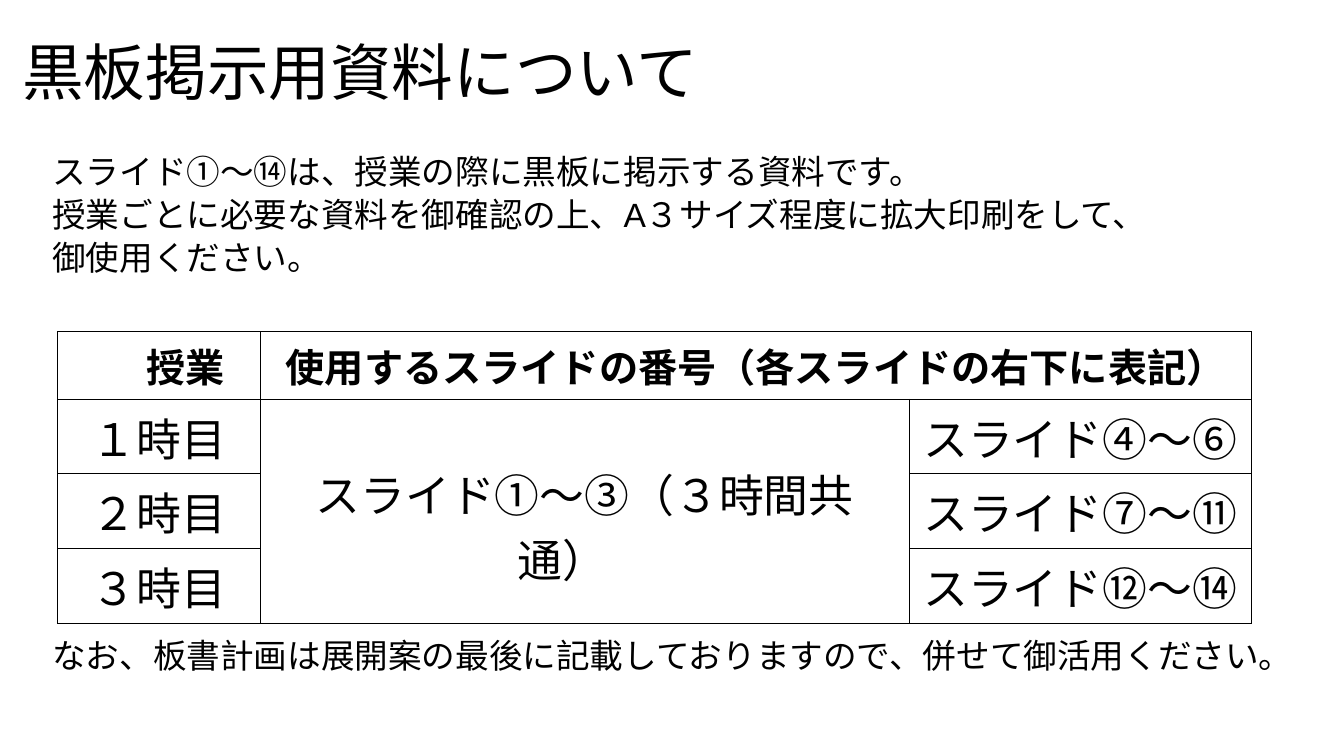
from lxml.etree import SubElement
from pptx import Presentation
from pptx.dml.color import RGBColor
from pptx.enum.text import MSO_ANCHOR, MSO_AUTO_SIZE, PP_ALIGN
from pptx.oxml.ns import qn
from pptx.util import Inches, Pt

BLACK = RGBColor(0x00, 0x00, 0x00)
WHITE = RGBColor(0xFF, 0xFF, 0xFF)
FONT = "Calibri"

TITLE = "黒板掲示用資料について"
INTRO = [  # paragraphs of (text, font) runs
    [("スライド①～⑭は、授業の際に黒板に掲示する資料です。", FONT)],
    [("授業ごとに必要な資料を御確認の上、", FONT), ("A", "Arial"),
     ("３サイズ程度に拡大印刷をして、", FONT)],
    [("御使用ください。", FONT)],
]
CLOSING = [[("なお、板書計画は展開案の最後に記載しておりますので、併せて御活用ください。", FONT)]]

HEADER = ["授業", "使用するスライドの番号（各スライドの右下に表記）", ""]
LESSONS = [
    ["１時目", "スライド①～③（３時間共通）　", "スライド④～⑥"],
    ["２時目", "", "スライド⑦～⑪"],
    ["３時目", "", "スライド⑫～⑭"],
]
COL_WIDTHS = [2.01, 6.44, 3.39]
HEADER_HEIGHT, LESSON_HEIGHT = 0.67, 0.74


def add_run(p, text, size, font=FONT, bold=False):
    r = p.add_run()
    r.text = text
    r.font.name = font
    r.font.size = Pt(size)
    r.font.bold = bold
    r.font.color.rgb = BLACK


def add_text(s, top, height, paragraphs):
    tf = s.shapes.add_textbox(Inches(0.42), Inches(top), Inches(12.9), Inches(height)).text_frame
    tf.word_wrap = True
    for i, runs in enumerate(paragraphs):
        p = tf.paragraphs[0] if i == 0 else tf.add_paragraph()
        p.line_spacing = 0.9
        if i:
            p.space_before = Pt(5)
        for text, font in runs:
            add_run(p, text, 24, font)


def add_borders(cell):
    tc_pr = cell._tc.get_or_add_tcPr()
    for i, side in enumerate(("lnL", "lnR", "lnT", "lnB")):
        ln = tc_pr.makeelement(qn(f"a:{side}"), {"w": str(Pt(0.5))})
        fill = SubElement(ln, qn("a:solidFill"))
        SubElement(fill, qn("a:srgbClr"), val=str(BLACK))
        tc_pr.insert(i, ln)


def add_lesson_table(s):
    rows = [HEADER] + LESSONS
    heights = [HEADER_HEIGHT] + [LESSON_HEIGHT] * len(LESSONS)
    table = s.shapes.add_table(len(rows), len(COL_WIDTHS), Inches(0.57), Inches(3.29),
                               Inches(sum(COL_WIDTHS)), Inches(sum(heights))).table
    for column, width in zip(table.columns, COL_WIDTHS):
        column.width = Inches(width)
    for row, height in zip(table.rows, heights):
        row.height = Inches(height)
    table.cell(0, 1).merge(table.cell(0, 2))
    table.cell(1, 1).merge(table.cell(len(LESSONS), 1))

    for i, row in enumerate(rows):
        for j, text in enumerate(row):
            cell = table.cell(i, j)
            cell.fill.solid()
            cell.fill.fore_color.rgb = WHITE
            add_borders(cell)
            if text:
                p = cell.text_frame.paragraphs[0]
                p.alignment = PP_ALIGN.CENTER
                add_run(p, text, 28 if i == 0 else 32, bold=i == 0)

    lesson_head = table.cell(0, 0)
    lesson_head.margin_right = Inches(0.35)
    lesson_head.text_frame.paragraphs[0].alignment = PP_ALIGN.RIGHT
    shared = table.cell(1, 1)
    shared.vertical_anchor = MSO_ANCHOR.MIDDLE
    shared.margin_top = Inches(0.34)


def main():
    prs = Presentation()
    prs.slide_width, prs.slide_height = Inches(13.33), Inches(7.5)
    s = prs.slides.add_slide(prs.slide_layouts[5])

    title = s.shapes.title
    title.left, title.top = Inches(0), Inches(0.16)
    title.width, title.height = Inches(7.15), Inches(0.97)
    tf = title.text_frame
    tf.auto_size = MSO_AUTO_SIZE.NONE
    tf.vertical_anchor = MSO_ANCHOR.BOTTOM
    p = tf.paragraphs[0]
    p.alignment = PP_ALIGN.CENTER
    p.line_spacing = 0.9
    add_run(p, TITLE, 44)

    add_text(s, 1.49, 1.6, INTRO)
    add_lesson_table(s)
    add_text(s, 6.29, 0.55, CLOSING)
    prs.save("out.pptx")


if __name__ == "__main__":
    main()
